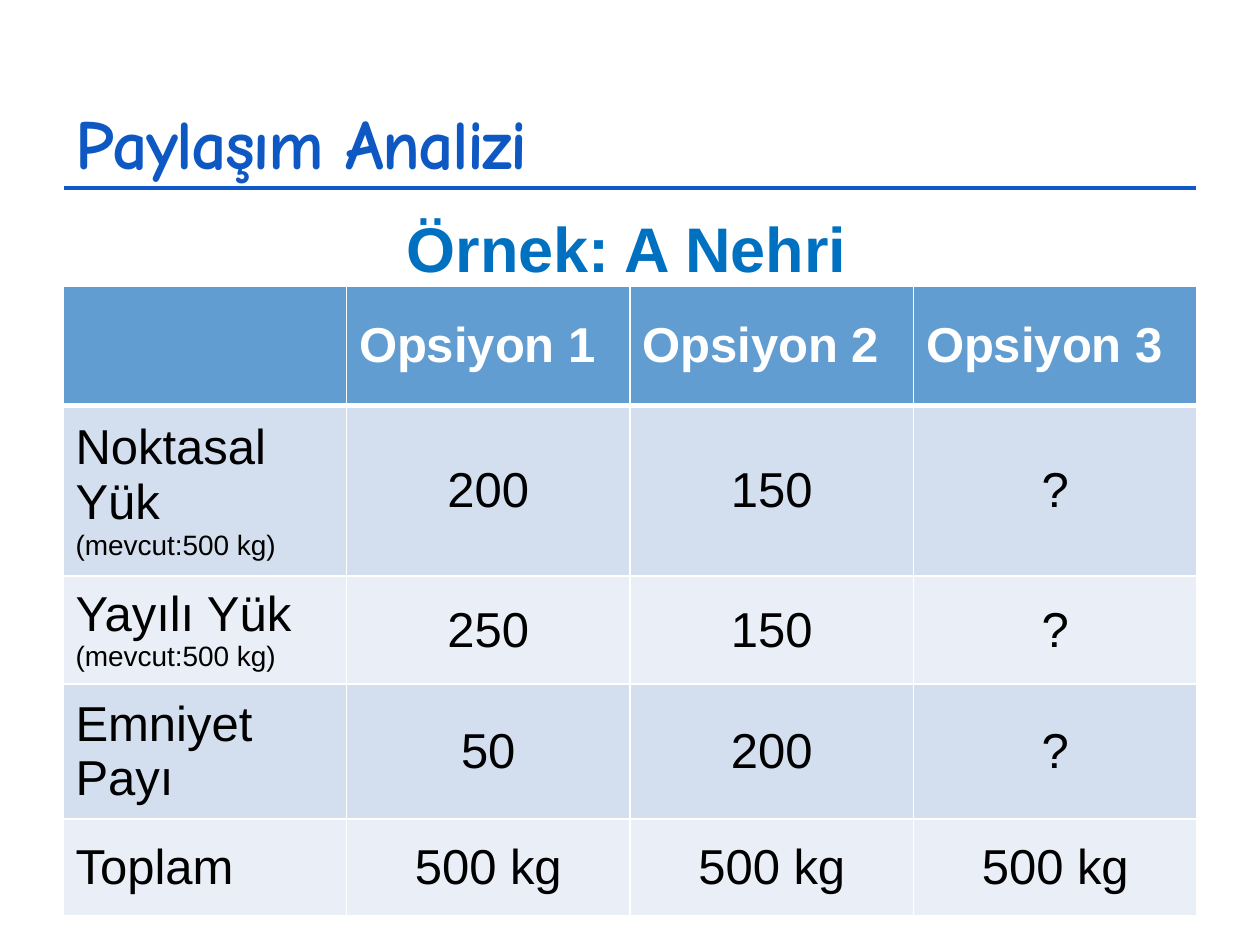
"""Build the load allocation slide with its options table."""
from dataclasses import dataclass

from lxml import etree
from pptx import Presentation
from pptx.dml.color import RGBColor
from pptx.enum.shapes import MSO_CONNECTOR
from pptx.enum.text import MSO_ANCHOR, PP_ALIGN
from pptx.oxml.ns import qn
from pptx.util import Inches, Pt

LEFT, CENTER = PP_ALIGN.LEFT, PP_ALIGN.CENTER
MIDDLE = MSO_ANCHOR.MIDDLE
STRAIGHT = MSO_CONNECTOR.STRAIGHT

COLORS = {
    "rule": "0F5AC8",
    "title": "0E58C4",
    "subtitle": "0070C0",
    "header": "629DD1",
    "odd": "D3DFEE",
    "even": "EAEFF7",
    "white": "FFFFFF",
    "black": "000000",
}


@dataclass
class LoadRow:
    label: str
    values: tuple[str, str, str]
    height: float
    note: str = ""


HEADER = LoadRow("", ("Opsiyon 1", "Opsiyon 2", "Opsiyon 3"), 0.95)
LOADS = [
    LoadRow("Noktasal Yük", ("200", "150", "?"), 1.35, "(mevcut:500 kg)"),
    LoadRow("Yayılı Yük", ("250", "150", "?"), 0.86, "(mevcut:500 kg)"),
    LoadRow("Emniyet Payı", ("50", "200", "?"), 1.07),
    LoadRow("Toplam", ("500 kg",) * 3, 0.77),
]


def write(para, text: str, *, size: float = 28, color: str = "black",
          font: str = "Arial", bold: bool = False, align=LEFT):
    """Add formatted text to a paragraph and return its run."""
    para.alignment = align
    span = para.add_run()
    span.text = text
    span.font.name = font
    span.font.size = Pt(size)
    span.font.bold = bold
    span.font.color.rgb = RGBColor.from_string(COLORS[color])
    return span


def add_border(cell, side: str, width: float) -> None:
    """Give one side of a cell a white border."""
    properties = cell._tc.get_or_add_tcPr()
    line = etree.SubElement(properties, qn(f"a:ln{side}"), w=str(Pt(width)))
    fill = etree.SubElement(line, qn("a:solidFill"))
    etree.SubElement(fill, qn("a:srgbClr"), val=COLORS["white"])


def style_cell(cell, fill: str, top: float, bottom: float) -> None:
    """Set the borders, fill and anchor of a cell."""
    for side, width in (("L", 1), ("R", 1), ("T", top), ("B", bottom)):
        add_border(cell, side, width)
    cell.fill.solid()
    cell.fill.fore_color.rgb = RGBColor.from_string(COLORS[fill])
    cell.vertical_anchor = MIDDLE


def add_title(page) -> None:
    """Place the title and the rule below it."""
    title = page.shapes.title
    title.left, title.top = Inches(0.5), Inches(0.58)
    title.width, title.height = Inches(9), Inches(1.08)
    title.text_frame.vertical_anchor = MIDDLE
    span = write(title.text_frame.paragraphs[0], "Paylaşım Analizi",
                 size=40, color="title", font="Comic Neue", bold=True)
    span.font._element.set("spc", "-100")

    rule = page.shapes.add_connector(
        STRAIGHT, Inches(0.51), Inches(1.49), Inches(9.49), Inches(1.49))
    rule.line.color.rgb = RGBColor.from_string(COLORS["rule"])
    rule.line.width = Pt(2.25)
    etree.SubElement(rule._element.spPr, qn("a:effectLst"))


def add_subtitle(page) -> None:
    """Place the example heading above the table."""
    box = page.shapes.add_textbox(
        Inches(3.13), Inches(1.61), Inches(3.73), Inches(0.71))
    box.text_frame.word_wrap = False
    write(box.text_frame.paragraphs[0], "Örnek: A Nehri",
          size=36, color="subtitle", bold=True)


def add_load_table(page) -> None:
    """Draw the header and the load rows."""
    rows = [HEADER, *LOADS]
    table = page.shapes.add_table(
        len(rows), 4, Inches(0.5), Inches(2.27), Inches(9), Inches(5)).table
    for index, row in enumerate(rows):
        table.rows[index].height = Inches(row.height)
        is_header = index == 0
        fill = "header" if is_header else ("even", "odd")[index % 2]
        for column, text in enumerate((row.label, *row.values)):
            cell = table.cell(index, column)
            style_cell(cell, fill, top=3 if index == 1 else 1,
                       bottom=3 if is_header else 1)
            if text:
                write(cell.text_frame.paragraphs[0], text, bold=is_header,
                      color="white" if is_header else "black",
                      align=LEFT if is_header or column == 0 else CENTER)
        if row.note:
            label = table.cell(index, 0).text_frame
            write(label.add_paragraph(), row.note, size=16)


def main() -> None:
    """Build and save the deck."""
    deck = Presentation()
    deck.slide_width, deck.slide_height = Inches(10), Inches(7.5)
    page = deck.slides.add_slide(deck.slide_layouts.get_by_name("Title Only"))
    add_title(page)
    add_load_table(page)
    add_subtitle(page)
    deck.save("out.pptx")


if __name__ == "__main__":
    main()
